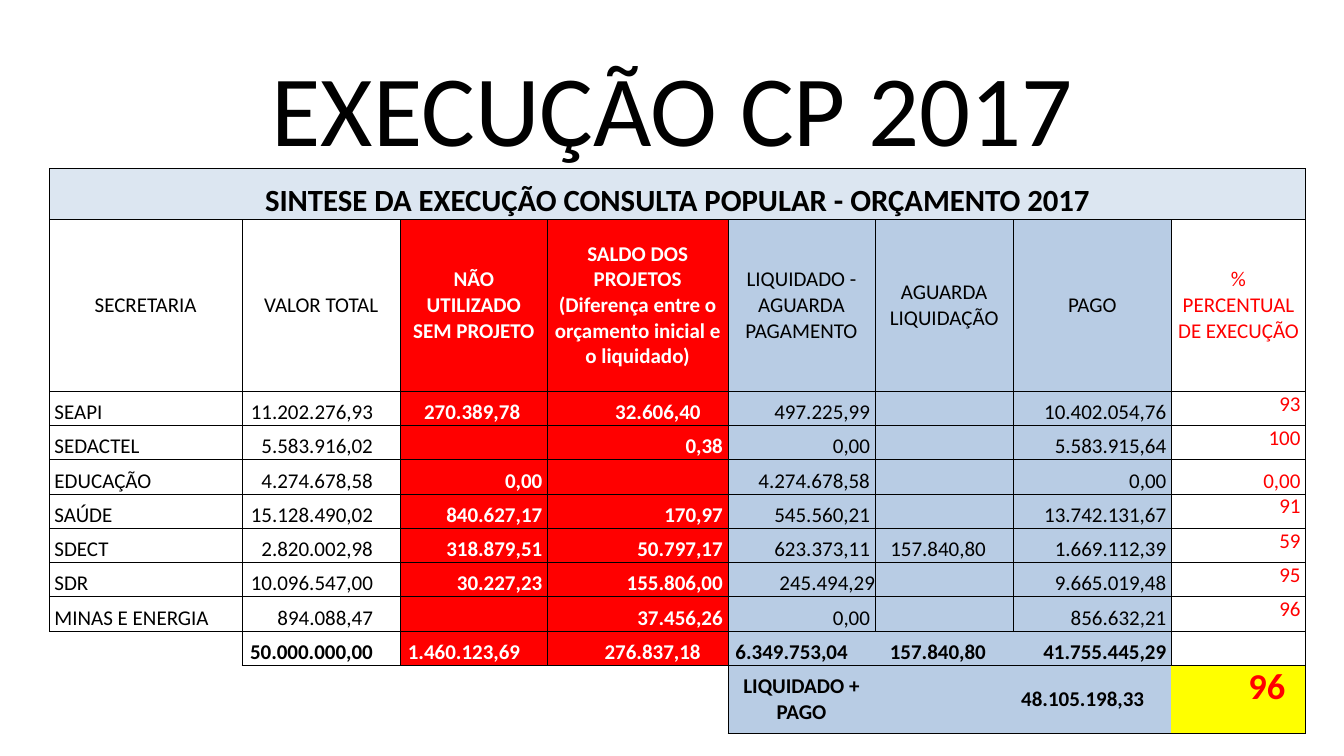
import pptx
import pptx.util
import pptx.dml.color
import pptx.enum.text
import pptx.oxml
import pptx.oxml.ns
from pptx.util import Inches

COLOURS = {
    "black": "000000",
    "white": "FFFFFF",
    "red": "FF0000",
    "blue": "B8CCE4",
    "pale": "DCE6F1",
    "yellow": "FFFF00",
}
FONT = "Calibri"
ALIGN = pptx.enum.text.PP_ALIGN
ANCHOR = pptx.enum.text.MSO_ANCHOR

COLUMN_WIDTHS = [1.91, 1.57, 1.46, 1.79, 1.46, 1.37, 1.57, 1.33]
ROW_HEIGHTS = [0.51, 1.7] + [0.34] * 8 + [0.68]
COLUMN_FILLS = ["white", "white", "red", "red", "blue", "blue", "blue", "white"]
COLUMN_INKS = ["black", "black", "white", "white", "black", "black", "black", "red"]
HEADER, TOTAL, SUMMARY = 1, 9, 10
PERCENT = 7

ROWS = [
    ["SINTESE DA EXECUÇÃO CONSULTA POPULAR - ORÇAMENTO 2017"] + [""] * 7,
    ["SECRETARIA", "VALOR TOTAL", "NÃO\vUTILIZADO\vSEM PROJETO",
     "SALDO DOS PROJETOS\v(Diferença entre o orçamento inicial e o liquidado)",
     "LIQUIDADO - AGUARDA PAGAMENTO", "AGUARDA\vLIQUIDAÇÃO", "PAGO",
     "% PERCENTUAL DE EXECUÇÃO"],
    ["SEAPI", "11.202.276,93", "270.389,78", "32.606,40", "497.225,99", "", "10.402.054,76", "93"],
    ["SEDACTEL", "5.583.916,02", "", "0,38", "0,00", "", "5.583.915,64", "100"],
    ["EDUCAÇÃO", "4.274.678,58", "0,00", "", "4.274.678,58", "", "0,00", "0,00"],
    ["SAÚDE", "15.128.490,02", "840.627,17", "170,97", "545.560,21", "", "13.742.131,67", "91"],
    ["SDECT", "2.820.002,98", "318.879,51", "50.797,17", "623.373,11", "157.840,80",
     "1.669.112,39", "59"],
    ["SDR", "10.096.547,00", "30.227,23", "155.806,00", "245.494,29", "", "9.665.019,48", "95"],
    ["MINAS E ENERGIA", "894.088,47", "", "37.456,26", "0,00", "", "856.632,21", "96"],
    ["", "50.000.000,00", "1.460.123,69", "276.837,18", "6.349.753,04", "157.840,80",
     "41.755.445,29", ""],
    ["", "", "", "", "LIQUIDADO + PAGO", "", "48.105.198,33", "96"],
]

FILL_EXCEPTIONS = {(TOTAL, 0): "white", (SUMMARY, 2): "white", (SUMMARY, 3): "white",
                   (SUMMARY, PERCENT): "yellow"}
BORDER_EXCEPTIONS = {
    (TOTAL, 0): "TR", (TOTAL, 4): "LTB", (TOTAL, 5): "TB", (TOTAL, 6): "TRB",
    (SUMMARY, 0): "", (SUMMARY, 1): "T", (SUMMARY, 2): "T", (SUMMARY, 3): "TR",
    (SUMMARY, 4): "LTB", (SUMMARY, 5): "TB", (SUMMARY, 6): "TB", (SUMMARY, 7): "TRB",
}
RIGHT_INSETS = {(2, 2): 0.27, (2, 3): 0.27, (6, 5): 0.27, (7, 4): 0, (TOTAL, 6): 0.05,
                (SUMMARY, 6): 0.27, (SUMMARY, PERCENT): 0.2}


def colour(name):
    """Return the named colour as an RGB value."""
    return pptx.dml.color.RGBColor.from_string(COLOURS[name])


def style_text(frame, size, ink, bold, align):
    """Format every paragraph and run of a text frame."""
    for para in frame.paragraphs:
        para.alignment = align
        for span in para.runs:
            span.font.name = FONT
            span.font.size = pptx.util.Pt(size)
            span.font.bold = bold
            span.font.color.rgb = colour(ink)


def set_borders(cell, sides):
    """Draw thin black lines on the given sides and none on the others."""
    properties = cell._tc.get_or_add_tcPr()
    for side in "LRTB":
        paint = "<a:noFill/>"
        if side in sides:
            paint = f'<a:solidFill><a:srgbClr val="{COLOURS["black"]}"/></a:solidFill>'
        namespace = pptx.oxml.ns.nsdecls("a")
        properties.append(pptx.oxml.parse_xml(
            f'<a:ln{side} {namespace} w="6350">{paint}</a:ln{side}>'))


def right_inset(row, column):
    """Return the right margin in inches that lines up the figures."""
    usual = 0.27 if column == 1 and row > HEADER or row == TOTAL else 0.05
    return RIGHT_INSETS.get((row, column), usual)


def cell_anchor(row, column):
    """Return the vertical anchor of a cell."""
    if column == PERCENT and row > HEADER and ROWS[row][column] != "0,00":
        return ANCHOR.TOP
    return ANCHOR.MIDDLE if row in (HEADER, SUMMARY) else ANCHOR.BOTTOM


def cell_alignment(row, column):
    """Return the horizontal alignment of a cell."""
    if row <= HEADER or (row, column) == (SUMMARY, 4):
        return ALIGN.CENTER
    return ALIGN.LEFT if column == 0 else ALIGN.RIGHT


def fill_cell(cell, row, column):
    """Set the text, borders, fill and format of one cell."""
    banner = row == 0
    size = 22 if banner else 26 if (row, column) == (SUMMARY, PERCENT) else 15
    ink = "black" if banner else COLUMN_INKS[column]
    bold = banner or row >= TOTAL or column in (2, 3)
    cell.text_frame.text = ROWS[row][column]
    cell.margin_top = cell.margin_bottom = 0
    cell.margin_left = Inches(0.05)
    cell.margin_right = Inches(right_inset(row, column))
    cell.vertical_anchor = cell_anchor(row, column)
    style_text(cell.text_frame, size, ink, bold, cell_alignment(row, column))
    set_borders(cell, BORDER_EXCEPTIONS.get((row, column), "LRTB"))
    cell.fill.solid()
    usual = "pale" if banner else COLUMN_FILLS[column]
    cell.fill.fore_color.rgb = colour(FILL_EXCEPTIONS.get((row, column), usual))


def add_title(page, text):
    """Place and format the slide title."""
    box = page.shapes.title
    box.left, box.top = Inches(0.92), Inches(0.4)
    box.width, box.height = Inches(11.5), Inches(1.45)
    frame = box.text_frame
    frame.text = text
    frame.auto_size = pptx.enum.text.MSO_AUTO_SIZE.NONE
    frame.vertical_anchor = ANCHOR.MIDDLE
    frame.paragraphs[0].line_spacing = 0.9
    style_text(frame, 72, "black", False, ALIGN.CENTER)


def add_budget_table(page):
    """Add the budget execution table."""
    table = page.shapes.add_table(
        len(ROW_HEIGHTS), len(COLUMN_WIDTHS), Inches(0.49), Inches(1.67),
        Inches(sum(COLUMN_WIDTHS)), Inches(sum(ROW_HEIGHTS))).table
    table.first_row = table.horz_banding = False
    for column, width in zip(table.columns, COLUMN_WIDTHS):
        column.width = Inches(width)
    for row, height in zip(table.rows, ROW_HEIGHTS):
        row.height = Inches(height)
    for row in range(len(ROW_HEIGHTS)):
        for column in range(len(COLUMN_WIDTHS)):
            fill_cell(table.cell(row, column), row, column)
    table.cell(0, 0).merge(table.cell(0, PERCENT))
    table.cell(SUMMARY, 2).merge(table.cell(SUMMARY, 3))


def main():
    """Build and save the slide."""
    deck = pptx.Presentation()
    deck.slide_width, deck.slide_height = Inches(13.33), Inches(7.5)
    page = deck.slides.add_slide(deck.slide_layouts[5])
    add_title(page, "EXECUÇÃO CP 2017")
    add_budget_table(page)
    deck.save("out.pptx")


if __name__ == "__main__":
    main()
